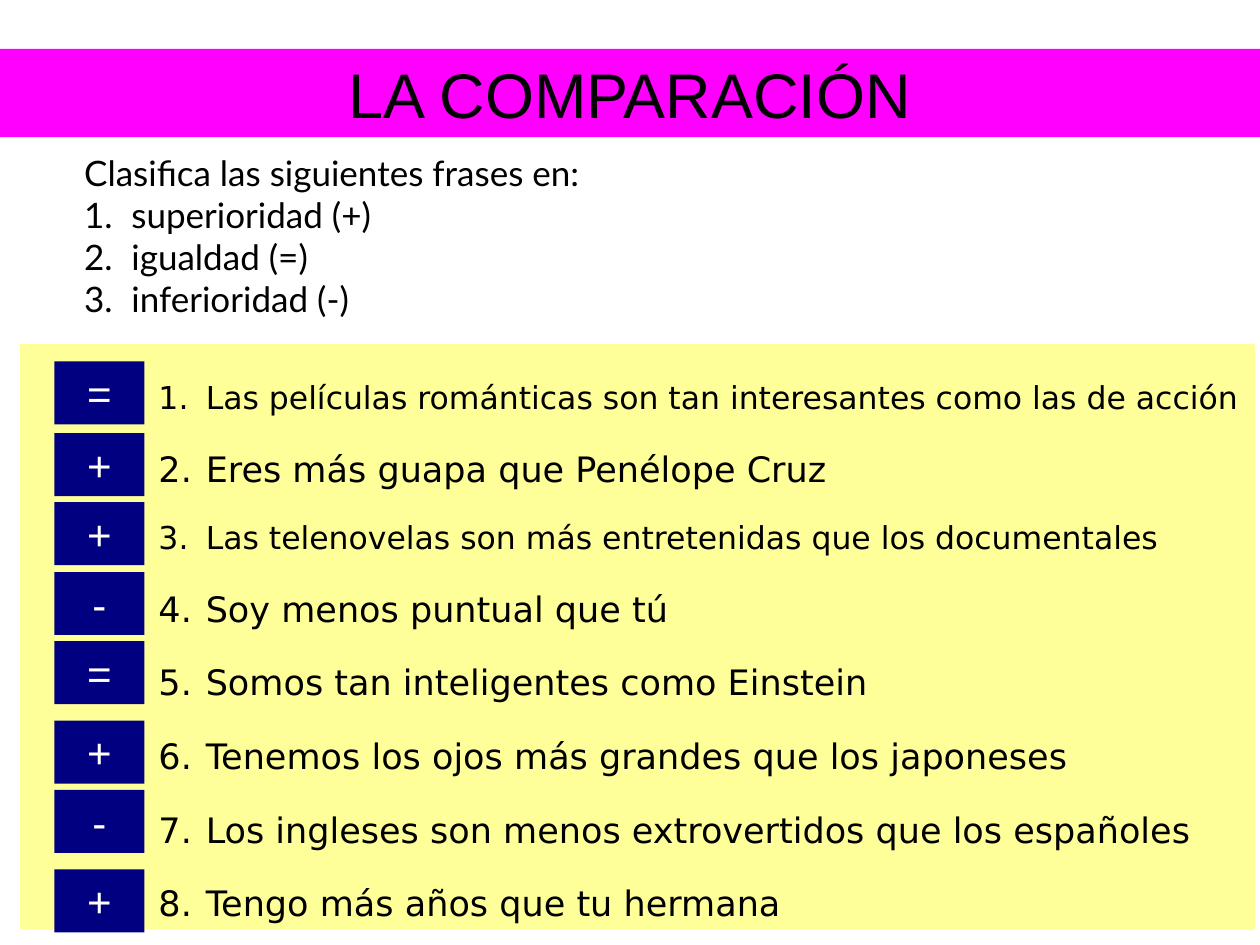
from pptx import Presentation
from pptx import util as u
from pptx.dml.color import RGBColor
from pptx.enum import shapes, text
from pptx.oxml.ns import qn
from lxml import etree

Pt = u.Pt

# Content
TITLE = "LA COMPARACIÓN"
PROMPT = "Clasifica las siguientes frases en:"
CLASSES = ["superioridad (+)", "igualdad (=)", "inferioridad (-)"]
# sentence, text size, answer, top of the answer box
SENTENCES = [
    ("Las películas románticas son tan interesantes como las de acción", 18, "=", 206.6),
    ("Eres más guapa que Penélope Cruz", 20, "+", 247.5),
    ("Las telenovelas son más entretenidas que los documentales", 18, "+", 287),
    ("Soy menos puntual que tú", 20, "-", 326.9),
    ("Somos tan inteligentes como Einstein", 20, "=", 366.4),
    ("Tenemos los ojos más grandes que los japoneses", 20, "+", 411.8),
    ("Los ingleses son menos extrovertidos que los españoles", 20, "-", 451.4),
    ("Tengo más años que tu hermana", 20, "+", 496.8),
]
COLORS = {"band": "FF00FF", "panel": "FFFF99", "answer": "000080",
          "dark": "000000", "light": "FFFFFF"}
HANG = 27

prs = Presentation()
prs.slide_width, prs.slide_height = Pt(720), Pt(540)
slide = prs.slides.add_slide(prs.slide_layouts[6])


def add_rect(left, top, width, height, color):
    sp = slide.shapes.add_shape(shapes.MSO_SHAPE.RECTANGLE,
                                Pt(left), Pt(top), Pt(width), Pt(height))
    sp.shadow.inherit = False
    sp.fill.solid()
    sp.fill.fore_color.rgb = RGBColor.from_string(COLORS[color])
    sp.line.fill.background()
    return sp


def write(tf, line, size, font, color="dark", align="LEFT", margin=0,
          numbered=False, spacing=None, level=0):
    """Fill the first empty paragraph of tf, or append a new one."""
    p = tf.paragraphs[0] if not tf.paragraphs[0].runs else tf.add_paragraph()
    p.alignment = text.PP_ALIGN[align]
    p.level = level
    if spacing:
        p.line_spacing = spacing
    r = p.add_run()
    r.text = line
    r.font.size, r.font.name = Pt(size), font
    r.font.color.rgb = RGBColor.from_string(COLORS[color])
    if margin:
        pPr = p._p.get_or_add_pPr()
        pPr.set("marL", str(Pt(margin)))
        pPr.set("indent", str(-Pt(HANG)))
        if numbered:
            etree.SubElement(pPr, qn("a:buFont"), typeface=font)
            etree.SubElement(pPr, qn("a:buAutoNum"), type="arabicPeriod")


# Title band
tf = add_rect(0, 28, 720, 50.4, "band").text_frame
write(tf, TITLE, 36, "Arial", align="CENTER")

# Instructions
tf = slide.shapes.add_textbox(Pt(41), Pt(82.8), Pt(298), Pt(103)).text_frame
tf.word_wrap = False
write(tf, PROMPT, 20, "Lato", margin=HANG)
for name in CLASSES:
    write(tf, name, 20, "Lato", margin=HANG, numbered=True)

# Sentence panel
tf = add_rect(11.5, 196.5, 705.6, 334.8, "panel").text_frame
tf.word_wrap = True
tf.vertical_anchor = text.MSO_ANCHOR.MIDDLE
for sentence, size, _, _ in SENTENCES:
    write(tf, sentence, size, "DejaVu Sans", margin=72 + HANG,
          numbered=True, spacing=1.75, level=2)

# Answer boxes
for _, _, sign, top in SENTENCES:
    tf = add_rect(31, top, 51.5, 36, "answer").text_frame
    write(tf, sign, 24, "Arial", "light", "CENTER")

prs.save("out.pptx")
